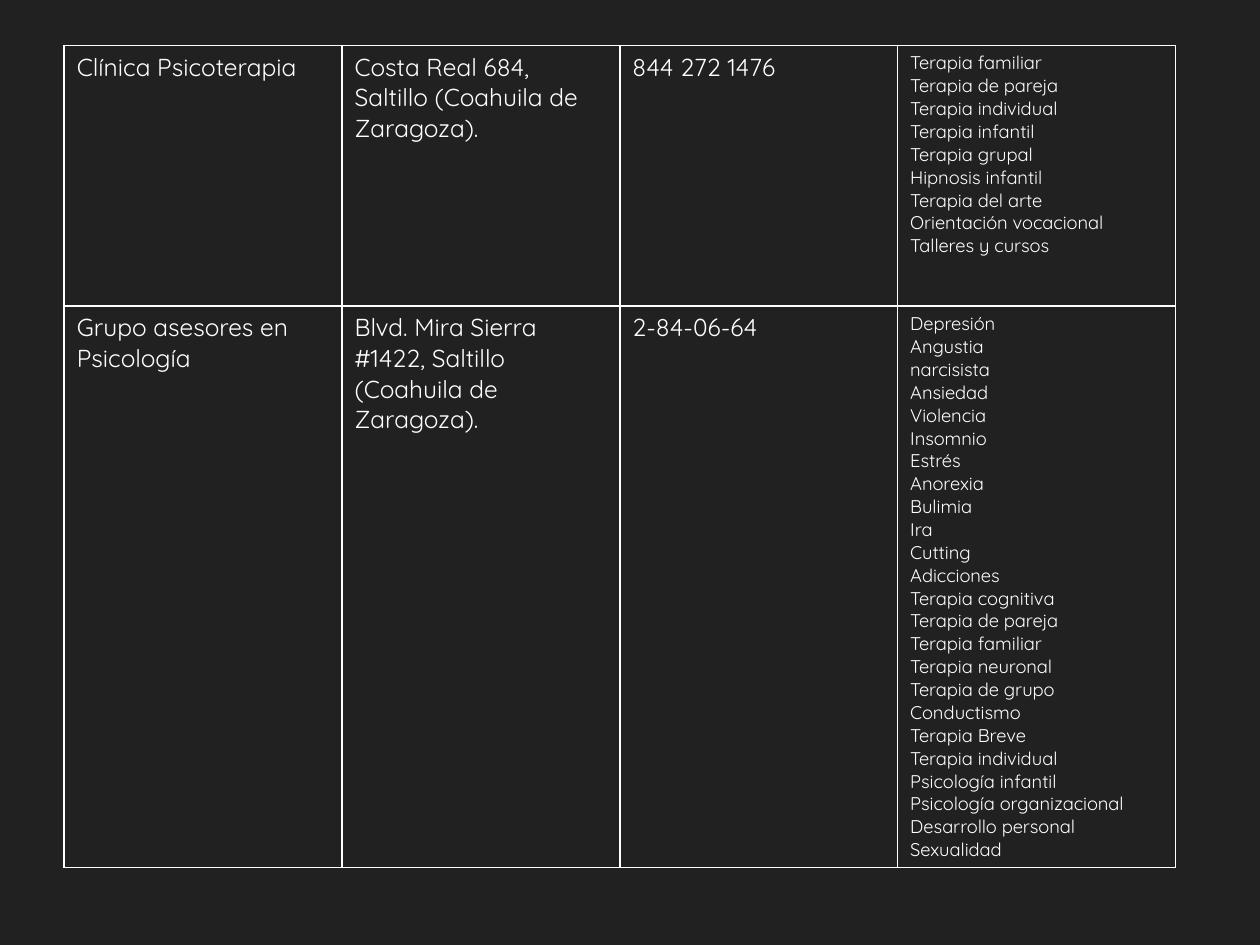
from dataclasses import dataclass

from lxml import etree
from pptx import Presentation
from pptx import util as u
from pptx.dml import color
from pptx.oxml import ns


@dataclass(frozen=True)
class Theme:
    background: str = "212121"
    ink: str = "FFFFFF"
    font: str = "Quicksand"
    detail_size: float = 14
    service_size: float = 10.5
    border_width: float = 1


THEME = Theme()

CLINICS = [
    (
        "Clínica Psicoterapia",
        "Costa Real 684, Saltillo (Coahuila de Zaragoza).",
        "844 272 1476",
        [
            "Terapia familiar", "Terapia de pareja", "Terapia individual",
            "Terapia infantil", "Terapia grupal", "Hipnosis infantil",
            "Terapia del arte", "Orientación vocacional", "Talleres y cursos",
        ],
    ),
    (
        "Grupo asesores en Psicología",
        "Blvd. Mira Sierra #1422, Saltillo (Coahuila de Zaragoza).",
        "2-84-06-64",
        [
            "Depresión", "Angustia", "narcisista", "Ansiedad", "Violencia",
            "Insomnio", "Estrés", "Anorexia", "Bulimia", "Ira", "Cutting",
            "Adicciones", "Terapia cognitiva", "Terapia de pareja",
            "Terapia familiar", "Terapia neuronal", "Terapia de grupo",
            "Conductismo", "Terapia Breve", "Terapia individual",
            "Psicología infantil", "Psicología organizacional",
            "Desarrollo personal", "Sexualidad",
        ],
    ),
]
ROW_HEIGHTS = [2.07, 4.45]


def write_text(frame, lines, size, ink=THEME.ink, font=THEME.font):
    for index, line in enumerate(lines):
        paragraph = frame.paragraphs[0] if index == 0 else frame.add_paragraph()
        run = paragraph.add_run()
        run.text = line
        run.font.size = u.Pt(size)
        run.font.name = font
        run.font.bold = False
        run.font.color.rgb = color.RGBColor.from_string(ink)


def outline_cell(cell):
    properties = cell._tc.get_or_add_tcPr()
    for position, side in enumerate(("lnL", "lnR", "lnT", "lnB")):
        border = etree.Element(ns.qn(f"a:{side}"), w=str(u.Pt(THEME.border_width)))
        fill = etree.SubElement(border, ns.qn("a:solidFill"))
        etree.SubElement(fill, ns.qn("a:srgbClr"), val=THEME.ink)
        properties.insert(position, border)


def add_directory(slide, left, top, width, height):
    frame = slide.shapes.add_table(
        len(CLINICS), len(CLINICS[0]), left, top, width, height
    )
    directory = frame.table
    directory.first_row = False
    directory.horz_banding = False
    for column in directory.columns:
        column.width = width // len(directory.columns)
    for row, row_height, clinic in zip(directory.rows, ROW_HEIGHTS, CLINICS):
        row.height = u.Inches(row_height)
        *details, services = clinic
        for cell, detail in zip(row.cells, details):
            write_text(cell.text_frame, [detail], size=THEME.detail_size)
        write_text(
            row.cells[len(details)].text_frame, services, size=THEME.service_size
        )
        for cell in row.cells:
            cell.fill.background()
            outline_cell(cell)


def main():
    deck = Presentation()
    deck.slide_width, deck.slide_height = u.Inches(10), u.Inches(7.5)
    slide = deck.slides.add_slide(deck.slide_layouts[6])
    slide.background.fill.solid()
    slide.background.fill.fore_color.rgb = color.RGBColor.from_string(THEME.background)
    add_directory(
        slide, u.Inches(0.51), u.Inches(0.36), u.Inches(8.82), u.Inches(sum(ROW_HEIGHTS))
    )
    deck.save("out.pptx")


if __name__ == "__main__":
    main()
